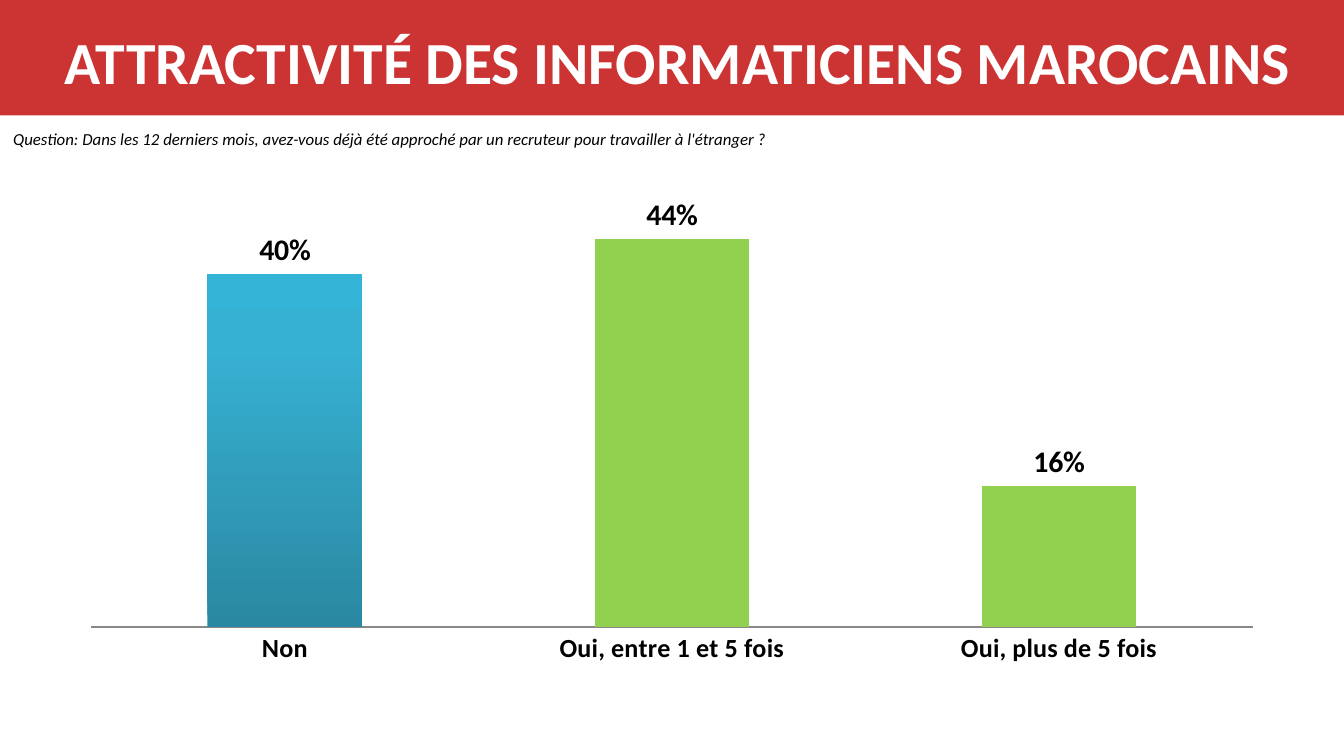
from copy import deepcopy

from pptx import Presentation
from pptx.chart.data import CategoryChartData
from pptx.dml.color import RGBColor
from pptx.enum.chart import XL_CHART_TYPE, XL_LABEL_POSITION, XL_TICK_MARK
from pptx.enum.shapes import MSO_SHAPE
from pptx.enum.text import MSO_ANCHOR, PP_ALIGN
from pptx.oxml.ns import qn
from pptx.util import Inches, Pt

COLUMNS = XL_CHART_TYPE.COLUMN_CLUSTERED
OUTSIDE_END = XL_LABEL_POSITION.OUTSIDE_END
NO_TICK = XL_TICK_MARK.NONE
RECTANGLE = MSO_SHAPE.RECTANGLE
MIDDLE, TOP = MSO_ANCHOR.MIDDLE, MSO_ANCHOR.TOP
CENTER, LEFT = PP_ALIGN.CENTER, PP_ALIGN.LEFT

ANSWERS = {"Non": 0.4, "Oui, entre 1 et 5 fois": 0.44, "Oui, plus de 5 fois": 0.16}
NO_GRADIENT = [(0, "2A88A2"), (0.8, "37B1D2"), (1, "34B4D6")]
YES_GREEN = "92D050"


def rgb(value):
    return RGBColor.from_string(value)


def set_formats(target, formats):
    for name, value in formats.items():
        setattr(target, name, value)


def set_font(font, color="000000", **formats):
    font.color.rgb = rgb(color)
    set_formats(font, {"name": "Calibri", **formats})


def add_text(slide, box, wording, anchor, alignment, **formats):
    frame = slide.shapes.add_textbox(*map(Inches, box)).text_frame
    frame.word_wrap = True
    frame.vertical_anchor = anchor
    paragraph = frame.paragraphs[0]
    paragraph.alignment = alignment
    run = paragraph.add_run()
    run.text = wording
    set_font(run.font, **formats)


def add_header(slide, box):
    left, top, width, height = box
    band = slide.shapes.add_shape(RECTANGLE, *map(Inches, box))
    band.shadow.inherit = False
    band.fill.solid()
    band.fill.fore_color.rgb = rgb("CC3333")
    band.line.fill.background()
    title_box = (left - 0.12, top - 0.02, width + 0.33, height + 0.08)
    add_text(slide, title_box, "ATTRACTIVITÉ DES INFORMATICIENS MAROCAINS",
             MIDDLE, CENTER, color="FFFFFF", size=Pt(32), bold=True)


def add_question(slide, box):
    add_text(slide, box,
             "Question: Dans les 12 derniers mois, avez-vous déjà été approché "
             "par un recruteur pour travailler à l'étranger ?",
             TOP, LEFT, size=Pt(9), italic=True)


def fill_answers(answers):
    fill = answers.format.fill
    fill.gradient()
    fill.gradient_angle = 90
    stop_list = next(answers._element.iter(qn("a:gsLst")))
    stop_list.insert(1, deepcopy(stop_list[0]))
    for stop, (position, color) in zip(fill.gradient_stops, NO_GRADIENT):
        stop.position = position
        stop.color.rgb = rgb(color)
    for index in (1, 2):
        yes_fill = answers.points[index].format.fill
        yes_fill.solid()
        yes_fill.fore_color.rgb = rgb(YES_GREEN)


def add_answer_chart(slide, box):
    data = CategoryChartData(number_format="0%")
    data.categories = list(ANSWERS)
    data.add_series("Series 1", list(ANSWERS.values()))
    chart = slide.shapes.add_chart(COLUMNS, *map(Inches, box), data).chart
    set_formats(chart, {"has_legend": False, "has_title": False})
    set_font(chart.font, size=Pt(18))

    category_axis = chart.category_axis
    category_axis.major_tick_mark = NO_TICK
    category_axis.format.line.color.rgb = rgb("888888")
    category_axis.format.line.width = Pt(0.75)
    set_font(category_axis.tick_labels.font, size=Pt(14), bold=True)

    set_formats(chart.value_axis, {"minimum_scale": 0, "maximum_scale": 0.5,
                                   "has_major_gridlines": False, "visible": False})

    plot = chart.plots[0]
    set_formats(plot, {"gap_width": 150, "overlap": -25, "vary_by_categories": False})
    answers = plot.series[0]
    fill_answers(answers)
    labels = answers.data_labels
    set_formats(labels, {"show_value": True, "number_format": "0%",
                         "number_format_is_linked": False, "position": OUTSIDE_END})
    set_font(labels.font, size=Pt(16), bold=True)


def main():
    deck = Presentation()
    deck.slide_width = Inches(10)
    deck.slide_height = deck.slide_width * 9 // 16
    slide = deck.slides.add_slide(deck.slide_layouts[6])
    add_header(slide, (0, 0, 10, 0.86))
    add_answer_chart(slide, (0.5, 1.31, 9, 3.71))
    add_question(slide, (0, 0.91, 6.5, 0.25))
    deck.save("out.pptx")


if __name__ == "__main__":
    main()
